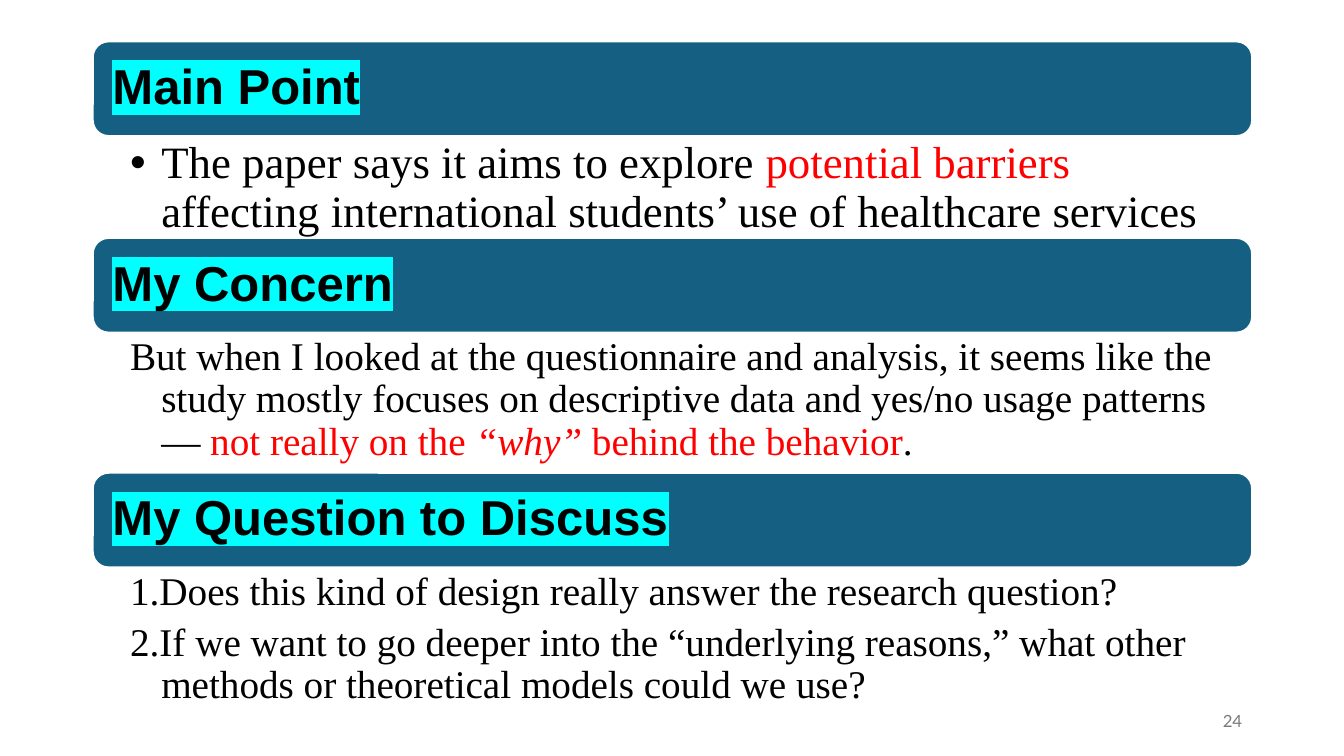
from dataclasses import dataclass

from lxml.etree import SubElement
from pptx import Presentation
from pptx.dml.color import RGBColor as Rgb
from pptx.enum.shapes import MSO_SHAPE as Preset
from pptx.enum.text import MSO_ANCHOR as Anchor, MSO_AUTO_SIZE as AutoSize, PP_ALIGN as Align
from pptx.oxml.ns import qn
from pptx.util import Inches, Pt

COLORS = {"bar": "156082", "white": "FFFFFF", "text": "000000",
          "accent": "FF0000", "highlight": "00FFFF", "number": "797979"}
SLIDE_WIDTH, SLIDE_HEIGHT = Inches(13.33), Inches(7.5)

# Percentages of the slide's width and height
LEFT, WIDTH = 6.9, 86.27
TOP, BAR_HEIGHT = 5.47, 12.53
HEADING_INSET_X, HEADING_INSET_Y = 0.34, 0.6


@dataclass(frozen=True)
class Span:
    text: str
    color: str = "text"
    italic: bool = False


@dataclass(frozen=True)
class Section:
    heading: str
    paragraphs: list[list[Span]]
    placeholder: int
    height: float
    size: int = 28
    right_inset: float = 0.22
    bullet: str | None = None


SECTIONS = [
    Section("Main Point", [[
        Span("The paper says it aims to explore "),
        Span("potential barriers ", "accent"),
        Span("affecting international students’ use of healthcare services"),
    ]], placeholder=1, height=13.47, size=32, right_inset=0.25, bullet="•"),
    Section("My Concern", [[
        Span("But when I looked at the questionnaire and analysis, it seems like the study "
             "mostly focuses on descriptive data and yes/no usage patterns — "),
        Span("not really on the ", "accent"),
        Span("“why” ", "accent", italic=True),
        Span("behind the behavior", "accent"),
        Span("."),
    ]], placeholder=2, height=18.53),
    Section("My Question to Discuss", [
        [Span("1.Does this kind of design really answer the research question?")],
        [Span("2.If we want to go deeper into the “underlying reasons,” what other methods "
              "or theoretical models could we use?")],
    ], placeholder=4, height=19.6),
]


def across(percent: float) -> int:
    return round(SLIDE_WIDTH * percent / 100)


def down(percent: float) -> int:
    return round(SLIDE_HEIGHT * percent / 100)


def place(shape, left: float, top: float, width: float, height: float) -> None:
    shape.left, shape.top = across(left), down(top)
    shape.width, shape.height = across(width), down(height)


def set_frame(shape, anchor: Anchor, insets: tuple[float, float, float, float]):
    frame = shape.text_frame
    frame.word_wrap, frame.auto_size = True, AutoSize.NONE
    frame.vertical_anchor = anchor
    (frame.margin_left, frame.margin_top,
     frame.margin_right, frame.margin_bottom) = map(Inches, insets)
    return frame


def set_paragraph(paragraph, indent: float = 0, bullet: str | None = None) -> None:
    paragraph.alignment = Align.LEFT
    paragraph.line_spacing = 0.9
    paragraph.space_before, paragraph.space_after = Pt(0), Pt(6)
    properties = paragraph._p.get_or_add_pPr()
    properties.set("marL", str(Inches(indent)))
    properties.set("indent", str(-Inches(indent)))
    if bullet:
        SubElement(properties, qn("a:buChar"), char=bullet)
    else:
        SubElement(properties, qn("a:buNone"))


def add_run(paragraph, span: Span, size: int, font_name: str, bold: bool = False):
    run = paragraph.add_run()
    run.text = span.text
    font = run.font
    font.name, font.size = font_name, Pt(size)
    font.bold, font.italic = bold, span.italic
    font.color.rgb = Rgb.from_string(COLORS[span.color])
    return run


def highlight(run, color: str) -> None:
    properties = run._r.get_or_add_rPr()
    mark = SubElement(properties, qn("a:highlight"))
    SubElement(mark, qn("a:srgbClr"), val=COLORS[color])
    properties.find(qn("a:solidFill")).addnext(mark)


def draw_bar(slide, top: float) -> None:
    bar = slide.shapes.add_shape(Preset.ROUNDED_RECTANGLE, 0, 0, 0, 0)
    place(bar, LEFT, top, WIDTH, BAR_HEIGHT)
    bar.shadow.inherit = False
    bar.fill.solid()
    bar.fill.fore_color.rgb = Rgb.from_string(COLORS["bar"])
    bar.line.color.rgb = Rgb.from_string(COLORS["white"])
    bar.line.width = Pt(1.5)
    # Bars lie behind the placeholders
    slide.shapes._spTree.insert(2, bar._element)


def draw_heading(shape, text: str, top: float) -> None:
    place(shape, LEFT + HEADING_INSET_X, top + HEADING_INSET_Y,
          WIDTH - 2 * HEADING_INSET_X, BAR_HEIGHT - 2 * HEADING_INSET_Y)
    paragraph = set_frame(shape, Anchor.MIDDLE, (0.15,) * 4).paragraphs[0]
    set_paragraph(paragraph)
    highlight(add_run(paragraph, Span(text), 35, "Arial", bold=True), "highlight")


def draw_body(shape, section: Section, top: float) -> None:
    place(shape, LEFT, top, WIDTH, section.height)
    frame = set_frame(shape, Anchor.TOP, (0.37, 0.04, section.right_inset, 0.04))
    for index, spans in enumerate(section.paragraphs):
        paragraph = frame.add_paragraph() if index else frame.paragraphs[0]
        set_paragraph(paragraph, 0.31, section.bullet)
        for span in spans:
            add_run(paragraph, span, section.size, "Times New Roman")


def draw_slide_number(slide, number: str) -> None:
    box = slide.shapes.add_textbox(0, 0, 0, 0)
    place(box, 70.67, 92.67, 22.5, 5.33)
    paragraph = set_frame(box, Anchor.MIDDLE, (0.1, 0.05, 0.1, 0.05)).paragraphs[0]
    paragraph.alignment = Align.RIGHT
    add_run(paragraph, Span(number, "number"), 12, "Lato")


def main() -> None:
    presentation = Presentation()
    presentation.slide_width, presentation.slide_height = SLIDE_WIDTH, SLIDE_HEIGHT
    slide = presentation.slides.add_slide(presentation.slide_layouts[4])
    placeholders = {shape.placeholder_format.idx: shape for shape in slide.placeholders}

    # Sections stacked from the top: a bar, then its text
    top = TOP
    for index, section in enumerate(SECTIONS):
        draw_bar(slide, top)
        heading = slide.shapes.add_textbox(0, 0, 0, 0) if index else slide.shapes.title
        draw_heading(heading, section.heading, top)
        top += BAR_HEIGHT
        draw_body(placeholders[section.placeholder], section, top)
        top += section.height

    # Unused placeholder
    spare = placeholders[3]._element
    spare.getparent().remove(spare)

    draw_slide_number(slide, "24")
    presentation.save("out.pptx")


if __name__ == "__main__":
    main()
